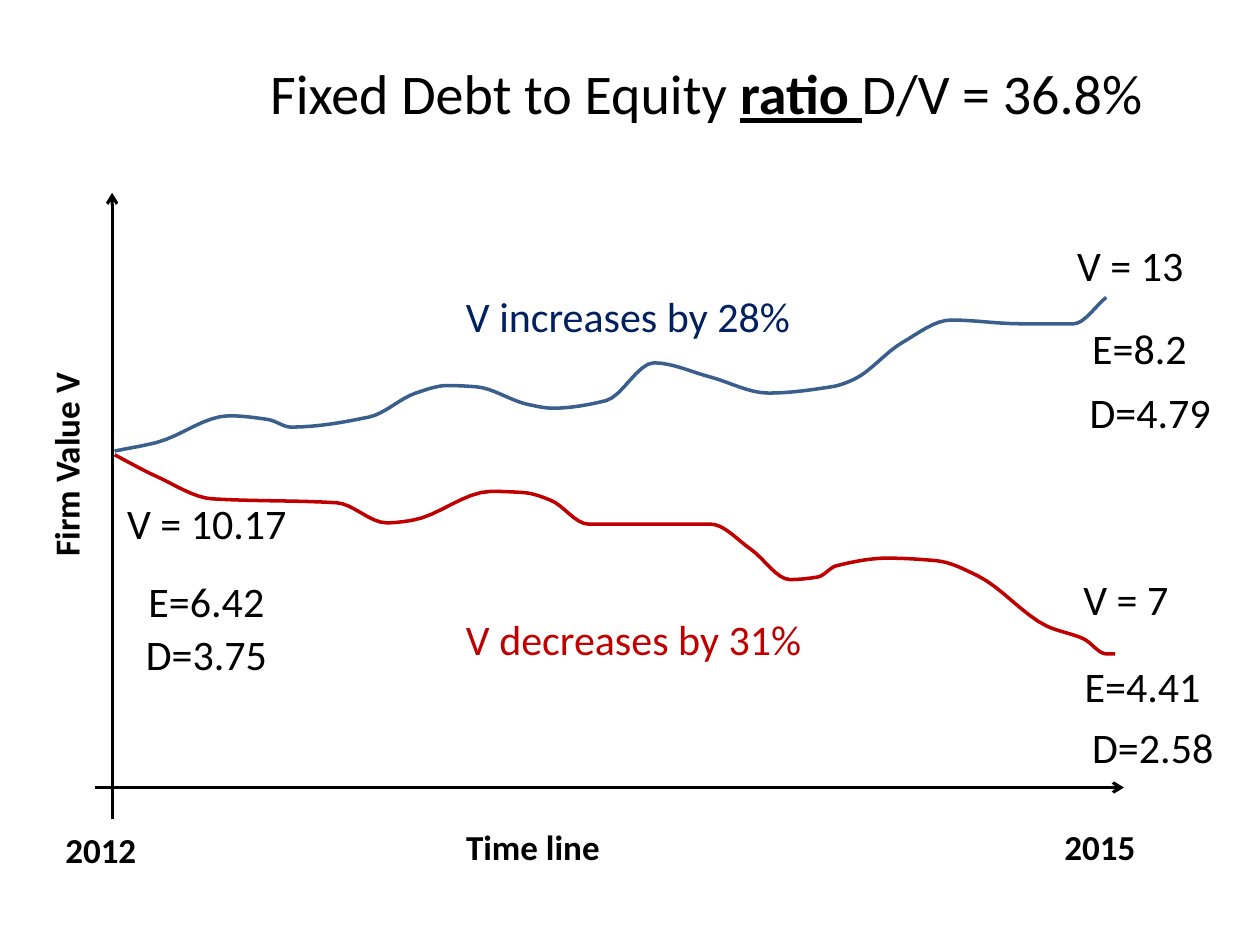
from itertools import pairwise

from lxml import etree
from pptx import Presentation
from pptx.dml.color import RGBColor
from pptx.enum.shapes import MSO_CONNECTOR
from pptx.enum.text import MSO_ANCHOR, PP_ALIGN
from pptx.oxml.ns import qn
from pptx.util import Inches, Pt

BLACK = RGBColor(0x00, 0x00, 0x00)
NAVY = RGBColor(0x00, 0x20, 0x60)
BLUE = RGBColor(0x3A, 0x5F, 0x8C)
RED = RGBColor(0xC0, 0x00, 0x00)

FONT = "Calibri"
TITLE_SIZE, VALUE_SIZE, AXIS_SIZE = 32, 24, 20
VALUE_H, AXIS_H = 0.5, 0.44
STEPS = 8

RISE_TURNS = [
    (0, 1.22), (0.34, 1.15), (0.91, 0.94), (1.22, 0.97), (1.4, 1.03), (2.02, 0.95),
    (2.39, 0.76), (2.64, 0.7), (2.87, 0.71), (3.28, 0.85), (3.48, 0.88), (3.9, 0.82),
    (4.28, 0.52), (4.72, 0.63), (5.19, 0.76), (5.69, 0.71), (5.87, 0.65), (6.25, 0.36),
    (6.64, 0.18), (7.19, 0.21), (7.61, 0.21), (7.87, 0),
]
FALL_TURNS = [
    (0, 0), (0.33, 0.17), (0.78, 0.35), (1.76, 0.38), (2.16, 0.54), (2.36, 0.52),
    (2.99, 0.29), (3.25, 0.3), (3.46, 0.36), (3.76, 0.55), (4.73, 0.55), (5.05, 0.75),
    (5.36, 0.99), (5.58, 0.97), (5.73, 0.88), (6.13, 0.82), (6.52, 0.84), (6.85, 0.96),
    (7.4, 1.36), (7.69, 1.46), (7.87, 1.58), (7.94, 1.58),
]


def add_run(p, text, size, color=BLACK, bold=False, underline=False):
    r = p.add_run()
    r.text = text
    r.font.name = FONT
    r.font.size = Pt(size)
    r.font.bold = bold
    r.font.underline = underline
    r.font.color.rgb = color


def add_box(s, x, y, w, h):
    sp = s.shapes.add_textbox(Inches(x), Inches(y), Inches(w), Inches(h))
    sp.text_frame.word_wrap = True
    return sp


def add_value(s, text, x, y, w, color=BLACK):
    sp = add_box(s, x, y, w, VALUE_H)
    add_run(sp.text_frame.paragraphs[0], text, VALUE_SIZE, color)


def add_axis_label(s, text, x, y, w, rotation=0):
    sp = add_box(s, x, y, w, AXIS_H)
    sp.rotation = rotation
    add_run(sp.text_frame.paragraphs[0], text, AXIS_SIZE, bold=True)


def add_title(s, x, y, w, h):
    tf = add_box(s, x, y, w, h).text_frame
    tf.vertical_anchor = MSO_ANCHOR.MIDDLE
    p = tf.paragraphs[0]
    p.alignment = PP_ALIGN.CENTER
    add_run(p, "Fixed Debt to Equity ", TITLE_SIZE)
    add_run(p, "ratio ", TITLE_SIZE, bold=True, underline=True)
    add_run(p, "D/V = 36.8%", TITLE_SIZE)


def add_arrow(s, x1, y1, x2, y2):
    c = s.shapes.add_connector(
        MSO_CONNECTOR.STRAIGHT, Inches(x1), Inches(y1), Inches(x2), Inches(y2))
    c.line.color.rgb = BLACK
    c.line.width = Pt(1.75)
    etree.SubElement(c.line._get_or_add_ln(), qn("a:tailEnd"), type="arrow")
    etree.SubElement(c._element.spPr, qn("a:effectLst"))


def add_axes(s, x, y, w, h):
    bottom = y + h
    time_y, value_x = bottom - 0.25, x + 0.14
    add_arrow(s, x, time_y, x + w, time_y)
    add_arrow(s, value_x, bottom, value_x, y)
    add_axis_label(s, "2012", x - 0.33, bottom + 0.03, 2.58)
    add_axis_label(s, "Time line", x + 2.85, bottom, 2.58)
    add_axis_label(s, "2015", x + 7.6, bottom, 1.07)
    add_axis_label(s, "Firm Value V", x - 1.1, y + 1.89, 1.75, rotation=270)


def turn_slopes(turns):
    slopes = [(y2 - y1) / (x2 - x1) for (x1, y1), (x2, y2) in pairwise(turns)]
    inner = [2 * a * b / (a + b) if a * b > 0 else 0 for a, b in pairwise(slopes)]
    return [slopes[0], *inner, slopes[-1]]


def smooth_curve(turns):
    curve = [turns[0]]
    knots = zip(turns, turn_slopes(turns))
    for ((x1, y1), m1), ((x2, y2), m2) in pairwise(knots):
        width = x2 - x1
        for step in range(1, STEPS + 1):
            t = step / STEPS
            blend = t * t * (3 - 2 * t)
            bend = t * (1 - t) * (m1 * (1 - t) - m2 * t)
            curve.append((x1 + width * t, y1 + (y2 - y1) * blend + width * bend))
    return curve


def add_trend(s, x, y, turns, color):
    start, *rest = [(Inches(dx), Inches(dy)) for dx, dy in smooth_curve(turns)]
    fb = s.shapes.build_freeform(*start)
    fb.add_line_segments(rest, close=False)
    sp = fb.convert_to_shape(Inches(x), Inches(y))
    sp.shadow.inherit = False
    sp.fill.background()
    sp.line.color.rgb = color
    sp.line.width = Pt(2)


def add_balance(s, x, y, firm, equity, debt, equity_at, debt_at):
    places = [(0, 0), equity_at, debt_at]
    texts = [f"V = {firm}", f"E={equity}", f"D={debt}"]
    for text, (dx, dy) in zip(texts, places):
        add_value(s, text, x + dx, y + dy, 1.44 if dx else 1.59)


def main():
    prs = Presentation()
    prs.slide_width, prs.slide_height = Inches(10), Inches(7.5)
    s = prs.slides.add_slide(prs.slide_layouts[6])
    add_title(s, 1.71, 0.3, 7.79, 0.87)
    add_axes(s, 0.75, 1.53, 8.17, 4.97)
    add_trend(s, 0.91, 2.36, RISE_TURNS, BLUE)
    add_trend(s, 0.91, 3.61, FALL_TURNS, RED)
    add_balance(s, 0.91, 3.9, "10.17", "6.42", "3.75", (0.17, 0.62), (0.15, 1.04))
    add_balance(s, 8.45, 1.85, "13", "8.2", "4.79", (0.12, 0.66), (0.1, 1.17))
    add_balance(s, 8.5, 4.5, "7", "4.41", "2.58", (0.01, 0.69), (0.07, 1.18))
    add_value(s, "V increases by 28%", 3.6, 2.26, 2.9, NAVY)
    add_value(s, "V decreases by 31%", 3.6, 4.82, 3.24, RED)
    prs.save("out.pptx")


if __name__ == "__main__":
    main()
